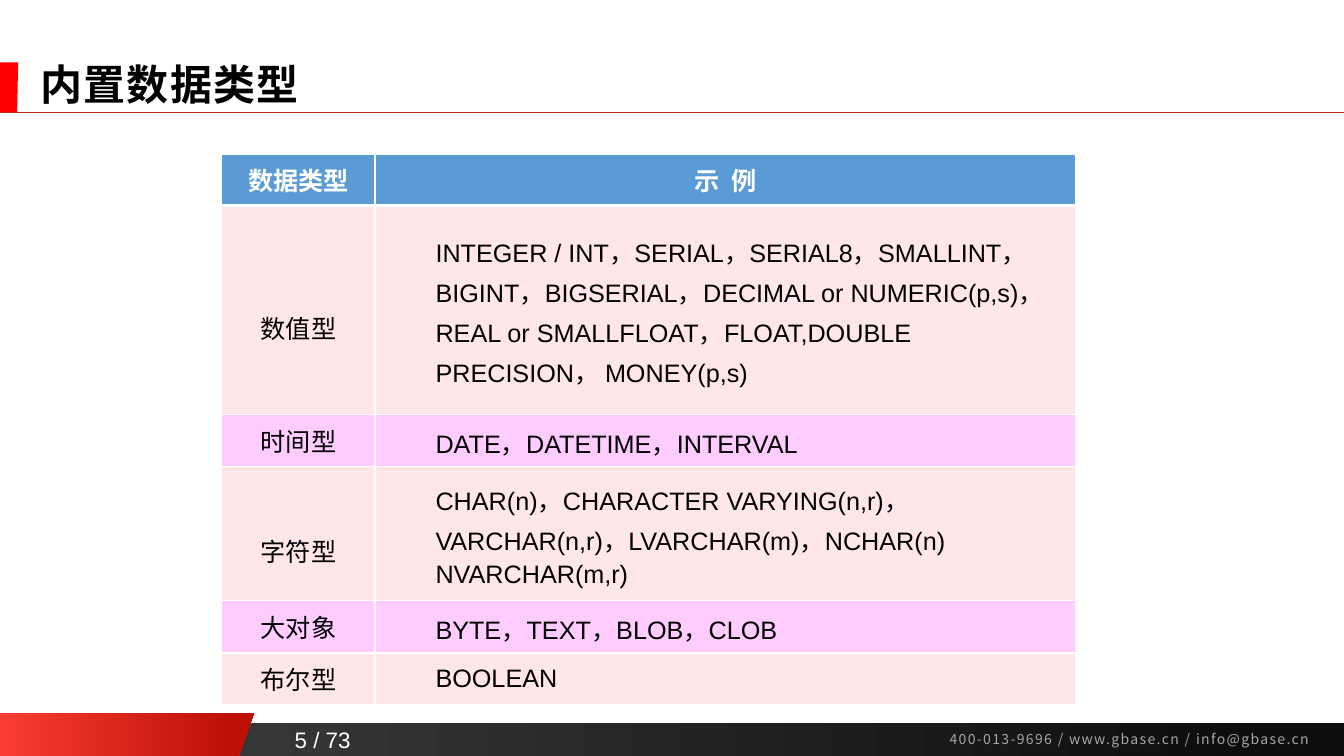
import dataclasses

import lxml.etree
import pptx
import pptx.dml.color
import pptx.dml.fill
import pptx.enum.shapes
import pptx.enum.text
import pptx.oxml.ns
import pptx.shapes.base
import pptx.slide
import pptx.table
import pptx.text.text
import pptx.util

Inches = pptx.util.Inches
Pt = pptx.util.Pt
RGBColor = pptx.dml.color.RGBColor
Align = pptx.enum.text.PP_ALIGN
Anchor = pptx.enum.text.MSO_ANCHOR
qn = pptx.oxml.ns.qn

WHITE = RGBColor(0xFF, 0xFF, 0xFF)
BLACK = RGBColor(0, 0, 0)
RED = RGBColor(0xFF, 0, 0)
RULE = RGBColor(0xB8, 0x2E, 0x24)
GREY = RGBColor(0xA6, 0xA6, 0xA6)
BLUE = RGBColor(0x5B, 0x9B, 0xD5)
ROSE = RGBColor(0xFF, 0xE7, 0xE7)
PINK = RGBColor(0xFF, 0xCC, 0xFF)
DARK = (RGBColor(0x40, 0x40, 0x40), RGBColor(0x0D, 0x0D, 0x0D))
FLAME = (RGBColor(0xF9, 0x3D, 0x32), RGBColor(0xBE, 0x10, 0x07))
SANS = "Noto Sans CJK SC"


@dataclasses.dataclass(frozen=True)
class Style:
    size: float
    color: RGBColor
    bold: bool = False
    font: str = "Arial"
    track: float = 0


@dataclasses.dataclass(frozen=True)
class Label:
    text: str
    box: tuple[float, float, float, float]
    style: Style
    align: Align = Align.LEFT
    anchor: Anchor = Anchor.TOP
    wrap: bool = True


@dataclasses.dataclass(frozen=True)
class Row:
    kind: str
    lines: tuple[str, ...]
    height: float
    drop: float = 0  # extra top margin of the kind cell
    lead: float = 1.1


HEAD = Style(18, WHITE, bold=True)
SPACED = Style(18, WHITE, bold=True, track=2)
BODY = Style(18, BLACK)

LABELS = (
    Label("内置数据类型", (0.3, 0.57, 12.26, 0.53),
          Style(30, BLACK, bold=True, track=1), anchor=Anchor.MIDDLE),
    Label("5 / 73", (2.74, 7.15, 0.92, 0.37), Style(16, WHITE),
          Align.CENTER, Anchor.BOTTOM, wrap=False),
    Label("400-013-9696 / www.gbase.cn / info@gbase.cn",
          (9.32, 7.2, 3.99, 0.27), Style(10, GREY, font=SANS, track=1)),
)

TOP = 0.51  # height of the header row
ROWS = (
    Row("数值型", (
        "INTEGER / INT，SERIAL，SERIAL8，SMALLINT，BIGINT，BIGSERIAL，"
        "DECIMAL or NUMERIC(p,s)，",
        "REAL or SMALLFLOAT，FLOAT,DOUBLE PRECISION， MONEY(p,s)",
    ), 2.07, drop=0.34),
    Row("时间型", ("DATE，DATETIME，INTERVAL",), 0.52),
    Row("字符型", (
        "CHAR(n)，CHARACTER VARYING(n,r)，VARCHAR(n,r)，LVARCHAR(m)，NCHAR(n)",
        "NVARCHAR(m,r)",
    ), 1.33, drop=0.34),
    Row("大对象", ("BYTE，TEXT，BLOB，CLOB",), 0.52),
    Row("布尔型", ("BOOLEAN",), 0.51, lead=1),
)


def add_run(para: pptx.text.text._Paragraph, text: str, style: Style) -> None:
    run = para.add_run()
    run.text = text
    run.font.size = Pt(style.size)
    run.font.bold = style.bold
    run.font.color.rgb = style.color
    run.font.name = style.font
    props = run.font._element
    lxml.etree.SubElement(props, qn("a:ea")).set("typeface", SANS)
    if style.track:
        props.set("spc", str(int(style.track * 100)))


def add_label(slide: pptx.slide.Slide, label: Label) -> None:
    frame = slide.shapes.add_textbox(*map(Inches, label.box)).text_frame
    frame.word_wrap = label.wrap
    frame.vertical_anchor = label.anchor
    para = frame.paragraphs[0]
    para.alignment = label.align
    add_run(para, label.text, label.style)


def blend(fill: pptx.dml.fill.FillFormat,
          colors: tuple[RGBColor, RGBColor], end: float) -> None:
    """Fill from left to right, reaching the last colour at end."""
    fill.gradient()
    fill.gradient_angle = 0
    for stop, color, place in zip(fill.gradient_stops, colors, (0, end)):
        stop.color.rgb = color
        stop.position = place


def add_wedge(slide: pptx.slide.Slide, top: float, wide: float,
              base: float, height: float) -> pptx.shapes.base.BaseShape:
    """Add a block at the left edge whose right side slants inward."""
    low = top + height
    pen = slide.shapes.build_freeform(0, Inches(top))
    pen.add_line_segments([(Inches(x), Inches(y)) for x, y in
                           ((wide, top), (base, low), (0, low))])
    wedge = pen.convert_to_shape()
    wedge.shadow.inherit = False
    wedge.line.fill.background()
    return wedge


def add_frame(slide: pptx.slide.Slide) -> None:
    """Add the footer bands, the title mark and the title rule."""
    band = slide.shapes.add_shape(
        pptx.enum.shapes.MSO_SHAPE.RECTANGLE,
        0, Inches(7.17), Inches(13.33), Inches(0.33))
    band.shadow.inherit = False
    band.line.fill.background()
    blend(band.fill, DARK, 0.94)
    blend(add_wedge(slide, 7.07, 2.52, 2.37, 0.43).fill, FLAME, 0.91)
    mark = add_wedge(slide, 0.62, 0.18, 0.17, 0.5)
    mark.fill.solid()
    mark.fill.fore_color.rgb = RED
    rule = slide.shapes.add_connector(
        pptx.enum.shapes.MSO_CONNECTOR.STRAIGHT,
        0, Inches(1.11), Inches(13.33), Inches(1.11))
    rule.line.color.rgb = RULE
    rule.line.width = Pt(0.5)
    lxml.etree.SubElement(rule._element.spPr, qn("a:effectLst"))


def style_cell(cell: pptx.table._Cell, color: RGBColor,
               top: float = 1, low: float = 1) -> None:
    props = cell._tc.get_or_add_tcPr()
    for side, width in (("L", 1), ("R", 1), ("T", top), ("B", low)):
        edge = lxml.etree.SubElement(props, qn(f"a:ln{side}"))
        edge.set("w", str(Pt(width)))
        fill = lxml.etree.SubElement(edge, qn("a:solidFill"))
        lxml.etree.SubElement(fill, qn("a:srgbClr")).set("val", str(WHITE))
    cell.fill.solid()
    cell.fill.fore_color.rgb = color
    cell.vertical_anchor = Anchor.MIDDLE


def write_mid(cell: pptx.table._Cell, text: str, style: Style) -> None:
    para = cell.text_frame.paragraphs[0]
    para.alignment = Align.CENTER
    add_run(para, text, style)


def write_lines(cell: pptx.table._Cell, row: Row) -> None:
    frame = cell.text_frame
    for index, line in enumerate(row.lines):
        para = frame.add_paragraph() if index else frame.paragraphs[0]
        para.level = 1
        para.line_spacing = float(row.lead)
        props = para._p.get_or_add_pPr()
        props.set("marL", str(Inches(0.5)))
        props.set("indent", "0")
        add_run(para, line, BODY)


def add_types(slide: pptx.slide.Slide) -> None:
    """Add the table of data types."""
    height = TOP + sum(row.height for row in ROWS)
    table = slide.shapes.add_table(
        len(ROWS) + 1, 2, Inches(2.2), Inches(1.53),
        Inches(8.47), Inches(height)).table
    for column, width in zip(table.columns, (1.52, 6.95)):
        column.width = Inches(width)
    table.rows[0].height = Inches(TOP)
    for col, (text, style) in enumerate((("数据类型", HEAD), ("示 例", SPACED))):
        style_cell(table.cell(0, col), BLUE, low=3)
        write_mid(table.cell(0, col), text, style)
    for index, row in enumerate(ROWS, 1):
        table.rows[index].height = Inches(row.height)
        kind, sample = table.cell(index, 0), table.cell(index, 1)
        for cell in (kind, sample):
            style_cell(cell, ROSE if index % 2 else PINK,
                       top=3 if index == 1 else 1)
        kind.margin_top = Inches(0.05 + row.drop)
        write_mid(kind, row.kind, BODY)
        write_lines(sample, row)


def main() -> None:
    deck = pptx.Presentation()
    deck.slide_width, deck.slide_height = Inches(13.33), Inches(7.5)
    slide = deck.slides.add_slide(deck.slide_layouts[6])
    add_frame(slide)
    for label in LABELS:
        add_label(slide, label)
    add_types(slide)
    deck.save("out.pptx")


if __name__ == "__main__":
    main()
